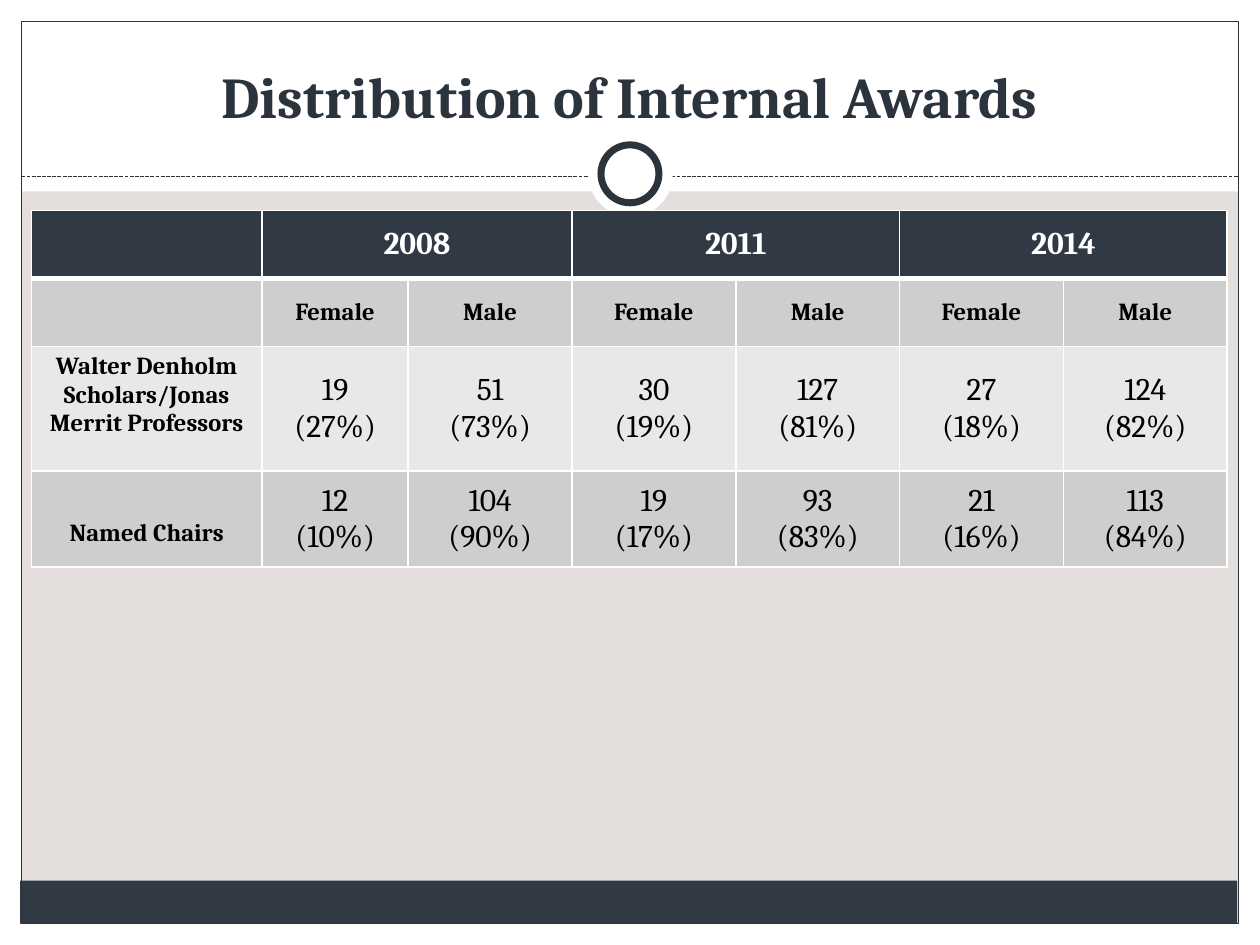
from pptx import Presentation
from pptx.dml.color import RGBColor
from pptx.enum.dml import MSO_LINE
from pptx.enum.shapes import MSO_CONNECTOR, MSO_SHAPE
from pptx.enum.text import MSO_ANCHOR, PP_ALIGN
from pptx.oxml.ns import qn
from pptx.util import Inches, Pt
from lxml.etree import SubElement

# Content
TITLE = "Distribution of Internal Awards"
YEARS = ["2008", "2011", "2014"]
GENDERS = ["Female", "Male"]
AWARDS = [
    ("Walter Denholm Scholars/Jonas Merrit Professors",
     [("19", "(27%)"), ("51", "(73%)"), ("30", "(19%)"),
      ("127", "(81%)"), ("27", "(18%)"), ("124", "(82%)")]),
    ("Named Chairs",
     [("12", "(10%)"), ("104", "(90%)"), ("19", "(17%)"),
      ("93", "(83%)"), ("21", "(16%)"), ("113", "(84%)")]),
]

# Style
FONT = "Cambria"
WHITE = RGBColor(0xFF, 0xFF, 0xFF)
BLACK = RGBColor(0, 0, 0)
INK = RGBColor(0x2B, 0x33, 0x3C)
SLATE = RGBColor(0x31, 0x3A, 0x44)
SAND = RGBColor(0xE4, 0xDF, 0xDC)
GREY = RGBColor(0xCE, 0xCE, 0xCF)
PALE = RGBColor(0xE8, 0xE8, 0xE9)

# Layout, in inches
WIDTH, HEIGHT, MARGIN = 10, 7.5, 0.17
COLUMNS = [1.83, 1.16] + [1.3] * 5
ROWS = [0.54, 0.54, 0.99, 0.76]
ROW_FILLS = [SLATE, GREY, PALE, GREY]

prs = Presentation()
prs.slide_width, prs.slide_height = Inches(WIDTH), Inches(HEIGHT)
slide = prs.slides.add_slide(prs.slide_layouts[6])
slide.background.fill.solid()
slide.background.fill.fore_color.rgb = SAND


def add_block(kind, box, fill=None, line=None, weight=0.75):
    block = slide.shapes.add_shape(kind, *map(Inches, box))
    block.shadow.inherit = False
    if fill is None:
        block.fill.background()
    else:
        block.fill.solid()
        block.fill.fore_color.rgb = fill
    if line is None:
        block.line.fill.background()
    else:
        block.line.color.rgb = line
        block.line.width = Pt(weight)


def write(frame, lines, size, color, bold):
    for i, line in enumerate(lines):
        paragraph = frame.add_paragraph() if i else frame.paragraphs[0]
        paragraph.alignment = PP_ALIGN.CENTER
        run = paragraph.add_run()
        run.text = line
        run.font.name, run.font.size, run.font.bold = FONT, Pt(size), bold
        run.font.color.rgb = color


def add_borders(cell, bottom):
    props = cell._tc.get_or_add_tcPr()
    for i, (side, weight) in enumerate(
            [("L", 1), ("R", 1), ("T", 1), ("B", bottom)]):
        edge = props.makeelement(qn(f"a:ln{side}"), {"w": str(Pt(weight))})
        fill = SubElement(edge, qn("a:solidFill"))
        SubElement(fill, qn("a:srgbClr"), val=str(WHITE))
        props.insert(i, edge)


# White margins, title band and footer bar
for box in [(0, HEIGHT - MARGIN, WIDTH, MARGIN), (0, 0, WIDTH, 1.52),
            (0, 0, MARGIN, HEIGHT), (WIDTH - MARGIN, 0, MARGIN, HEIGHT)]:
    add_block(MSO_SHAPE.RECTANGLE, box, WHITE)
add_block(MSO_SHAPE.RECTANGLE, (0.16, 6.99, 9.66, 0.34), SLATE)
add_block(MSO_SHAPE.RECTANGLE,
          (MARGIN, MARGIN, WIDTH - 2 * MARGIN, HEIGHT - 2 * MARGIN), line=INK)

# Dashed divider with ring
divider = slide.shapes.add_connector(
    MSO_CONNECTOR.STRAIGHT, Inches(MARGIN), Inches(1.4),
    Inches(WIDTH - MARGIN), Inches(1.4))
divider.line.color.rgb = INK
divider.line.width = Pt(0.75)
divider.line.dash_style = MSO_LINE.SQUARE_DOT
SubElement(divider._element.spPr, qn("a:effectLst"))
add_block(MSO_SHAPE.OVAL, (4.67, 1.05, 0.67, 0.67), WHITE)
add_block(MSO_SHAPE.OVAL, (4.77, 1.15, 0.46, 0.46), WHITE, INK, 4)

# Title
title = slide.shapes.add_textbox(*map(Inches, (0.33, 0.25, 9.33, 0.83))).text_frame
title.word_wrap = True
title.vertical_anchor = MSO_ANCHOR.BOTTOM
write(title, [TITLE], 33, INK, True)

# Awards table
awards = slide.shapes.add_table(
    len(ROWS), len(COLUMNS), Inches(0.25), Inches(1.67),
    Inches(sum(COLUMNS)), Inches(sum(ROWS))).table
for column, width in zip(awards.columns, COLUMNS):
    column.width = Inches(width)
for row, height, fill in zip(awards.rows, ROWS, ROW_FILLS):
    row.height = Inches(height)
    for cell in row.cells:
        cell.fill.solid()
        cell.fill.fore_color.rgb = fill
        cell.vertical_anchor = MSO_ANCHOR.MIDDLE
        add_borders(cell, 3 if fill == SLATE else 1)

for i, year in enumerate(YEARS):
    first = 1 + i * len(GENDERS)
    heading = awards.cell(0, first)
    heading.merge(awards.cell(0, first + 1))
    write(heading.text_frame, [year], 18, WHITE, True)
    for j, gender in enumerate(GENDERS):
        write(awards.cell(1, first + j).text_frame, [gender], 14, BLACK, True)

for r, (award, counts) in enumerate(AWARDS, 2):
    write(awards.cell(r, 0).text_frame, [award], 14, BLACK, True)
    for c, count in enumerate(counts, 1):
        write(awards.cell(r, c).text_frame, count, 18, BLACK, False)

# Award names sit high in the first row and low in the second
awards.cell(2, 0).vertical_anchor = MSO_ANCHOR.TOP
chairs = awards.cell(3, 0)
chairs.vertical_anchor = MSO_ANCHOR.BOTTOM
chairs.margin_bottom = Inches(0.15)

prs.save("out.pptx")
